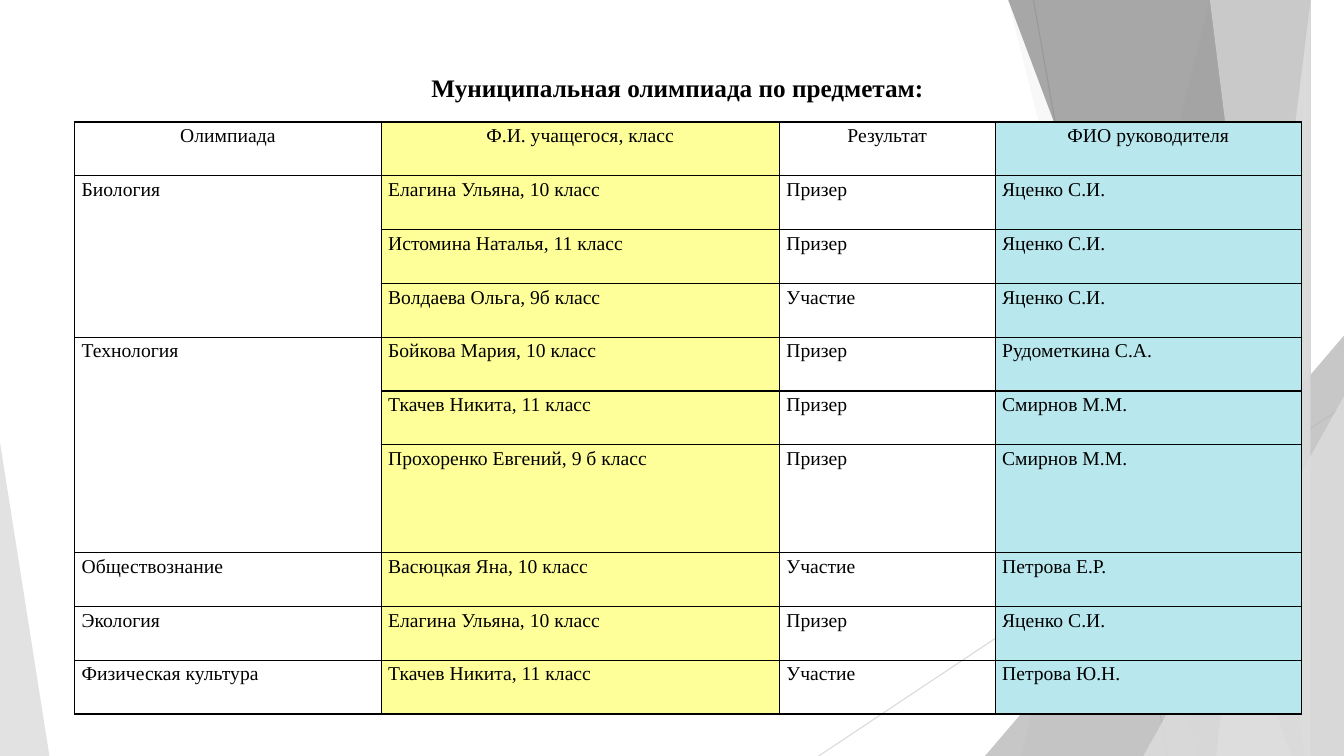
from dataclasses import dataclass
from typing import NamedTuple

from lxml.etree import SubElement
from pptx import Presentation
from pptx.dml.color import RGBColor
from pptx.enum.shapes import MSO_CONNECTOR, MSO_SHAPE
from pptx.enum.text import MSO_ANCHOR, PP_ALIGN
from pptx.oxml.ns import qn
from pptx.util import Inches, Pt


@dataclass(frozen=True)
class Theme:
    font: str = "Times New Roman"
    title_size: float = 18
    cell_size: float = 14
    border_width: float = 1
    ray_width: float = 0.75
    ink: str = "000000"
    student_fill: str = "FFFF99"
    teacher_fill: str = "B8E8EE"
    pale: str = "DDDDDD"
    lightest: str = "EBEBEB"
    mid: str = "B2B2B2"
    dark: str = "858585"
    ray_dark: str = "BFBFBF"
    ray_light: str = "D9D9D9"


class Ray(NamedTuple):
    x1: float
    y1: float
    x2: float
    y2: float
    color: str


class Shard(NamedTuple):
    """Band reaching the right slide edge, with a slanted left side."""
    top_x: float
    bottom_x: float
    color: str
    opacity: int


class Corner(NamedTuple):
    """Triangle standing on the slide's bottom edge; apex runs from 0 (left) to 1 (right)."""
    left: float
    top: float
    width: float
    apex: float
    color: str
    opacity: int


class Entry(NamedTuple):
    subject: str
    student: str
    result: str
    teacher: str


THEME = Theme()
SLIDE_W, SLIDE_H = 13.33, 7.5
SHARD_TOP = -0.01

RAYS = [
    Ray(10.25, 0, 11.58, SLIDE_H, THEME.ray_dark),
    Ray(SLIDE_W, 4.03, 8.12, SLIDE_H, THEME.ray_light),
]
FACETS = [
    Shard(12.28, 10.04, THEME.pale, 30),
    Shard(10.5, 11.83, THEME.pale, 20),
    Corner(9.77, 3.33, 3.56, 1, THEME.mid, 72),
    Shard(10.21, 12.91, THEME.dark, 70),
    Shard(13.03, 11.92, THEME.lightest, 70),
    Shard(11.96, 13.18, THEME.pale, 65),
    Corner(11.34, 3.93, 1.99, 1, THEME.pale, 80),
    Corner(0, 4.39, 0.49, 0, THEME.pale, 85),
]

TITLE = "Муниципальная олимпиада по предметам:"
HEADER = Entry("Олимпиада", "Ф.И. учащегося, класс", "Результат", "ФИО руководителя")
# An empty subject continues the subject above.
ENTRIES = [
    Entry("Биология", "Елагина Ульяна, 10 класс", "Призер", "Яценко С.И."),
    Entry("", "Истомина Наталья, 11 класс", "Призер", "Яценко С.И."),
    Entry("", "Волдаева Ольга, 9б класс", "Участие", "Яценко С.И."),
    Entry("Технология", "Бойкова Мария, 10 класс", "Призер", "Рудометкина С.А."),
    Entry("", "Ткачев Никита, 11 класс", "Призер", "Смирнов М.М."),
    Entry("", "Прохоренко Евгений, 9 б класс", "Призер", "Смирнов М.М."),
    Entry("Обществознание", "Васюцкая Яна, 10 класс", "Участие", "Петрова Е.Р."),
    Entry("Экология", "Елагина Ульяна, 10 класс", "Призер", "Яценко С.И."),
    Entry("Физическая культура", "Ткачев Никита, 11 класс", "Участие", "Петрова Ю.Н."),
]
COL_WIDTHS = [3.04, 3.95, 2.14, 3.04]
COL_FILLS = [None, THEME.student_fill, None, THEME.teacher_fill]
ROW_HEIGHT = 0.534
TALL_ROW, TALL_HEIGHT = 6, 1.07


def rgb(color: str) -> RGBColor:
    return RGBColor.from_string(color)


def add_ray(slide, ray: Ray) -> None:
    ends = [Inches(v) for v in ray[:4]]
    line = slide.shapes.add_connector(MSO_CONNECTOR.STRAIGHT, *ends)
    line.line.color.rgb = rgb(ray.color)
    line.line.width = Pt(THEME.ray_width)
    SubElement(line.element.spPr, qn("a:effectLst"))


def add_facet(slide, facet: Shard | Corner) -> None:
    if isinstance(facet, Shard):
        builder = slide.shapes.build_freeform(facet.top_x, SHARD_TOP, Inches(1))
        builder.add_line_segments([
            (SLIDE_W, SHARD_TOP), (SLIDE_W, SLIDE_H), (facet.bottom_x, SLIDE_H)])
        sp = builder.convert_to_shape()
    else:
        sp = slide.shapes.add_shape(
            MSO_SHAPE.ISOSCELES_TRIANGLE, Inches(facet.left), Inches(facet.top),
            Inches(facet.width), Inches(SLIDE_H - facet.top))
        sp.adjustments[0] = facet.apex
    sp.shadow.inherit = False
    sp.line.fill.background()
    sp.fill.solid()
    sp.fill.fore_color.rgb = rgb(facet.color)
    color = next(sp.element.iter(qn("a:srgbClr")))
    SubElement(color, qn("a:alpha"), val=str(facet.opacity * 1000))


def style_paragraph(p, size: float, align: PP_ALIGN, bold: bool = False) -> None:
    p.alignment = align
    p.font.name = THEME.font
    p.font.size = Pt(size)
    p.font.bold = bold
    p.font.color.rgb = rgb(THEME.ink)


def add_title(slide) -> None:
    box = slide.shapes.add_textbox(Inches(0.74), Inches(0.67), Inches(11.96), Inches(0.54))
    tf = box.text_frame
    tf.word_wrap = True
    tf.vertical_anchor = MSO_ANCHOR.TOP
    tf.text = TITLE
    style_paragraph(tf.paragraphs[0], THEME.title_size, PP_ALIGN.CENTER, bold=True)


def style_cell(cell, fill: str | None) -> None:
    cell.margin_left = cell.margin_right = Inches(0.07)
    cell.margin_top = cell.margin_bottom = 0
    tc_pr = cell._tc.get_or_add_tcPr()
    for side in ("lnL", "lnR", "lnT", "lnB"):
        ln = SubElement(tc_pr, qn(f"a:{side}"), w=str(Pt(THEME.border_width)))
        SubElement(SubElement(ln, qn("a:solidFill")), qn("a:srgbClr"), val=THEME.ink)
    if fill:
        cell.fill.solid()
        cell.fill.fore_color.rgb = rgb(fill)
    else:
        cell.fill.background()


def add_results(slide) -> None:
    rows = [HEADER, *ENTRIES]
    heights = [TALL_HEIGHT if i == TALL_ROW else ROW_HEIGHT for i in range(len(rows))]
    table = slide.shapes.add_table(
        len(rows), len(COL_WIDTHS), Inches(0.74), Inches(1.21),
        Inches(sum(COL_WIDTHS)), Inches(sum(heights))).table
    table.first_row = table.horz_banding = False
    for column, width in zip(table.columns, COL_WIDTHS):
        column.width = Inches(width)
    for row, height in zip(table.rows, heights):
        row.height = Inches(height)

    for i, entry in enumerate(rows):
        align = PP_ALIGN.LEFT if i else PP_ALIGN.CENTER
        for j, (text, fill) in enumerate(zip(entry, COL_FILLS)):
            cell = table.cell(i, j)
            style_cell(cell, fill)
            cell.text = text
            p = cell.text_frame.paragraphs[0]
            p.line_spacing = 1.15
            style_paragraph(p, THEME.cell_size, align)

    starts = [i for i, entry in enumerate(rows) if entry.subject]
    for start, end in zip(starts, [*starts[1:], len(rows)]):
        if end - start > 1:
            table.cell(start, 0).merge(table.cell(end - 1, 0))


def main() -> None:
    prs = Presentation()
    prs.slide_width, prs.slide_height = Inches(SLIDE_W), Inches(SLIDE_H)
    slide = prs.slides.add_slide(prs.slide_layouts[6])
    for ray in RAYS:
        add_ray(slide, ray)
    for facet in FACETS:
        add_facet(slide, facet)
    add_title(slide)
    add_results(slide)
    prs.save("out.pptx")


if __name__ == "__main__":
    main()
